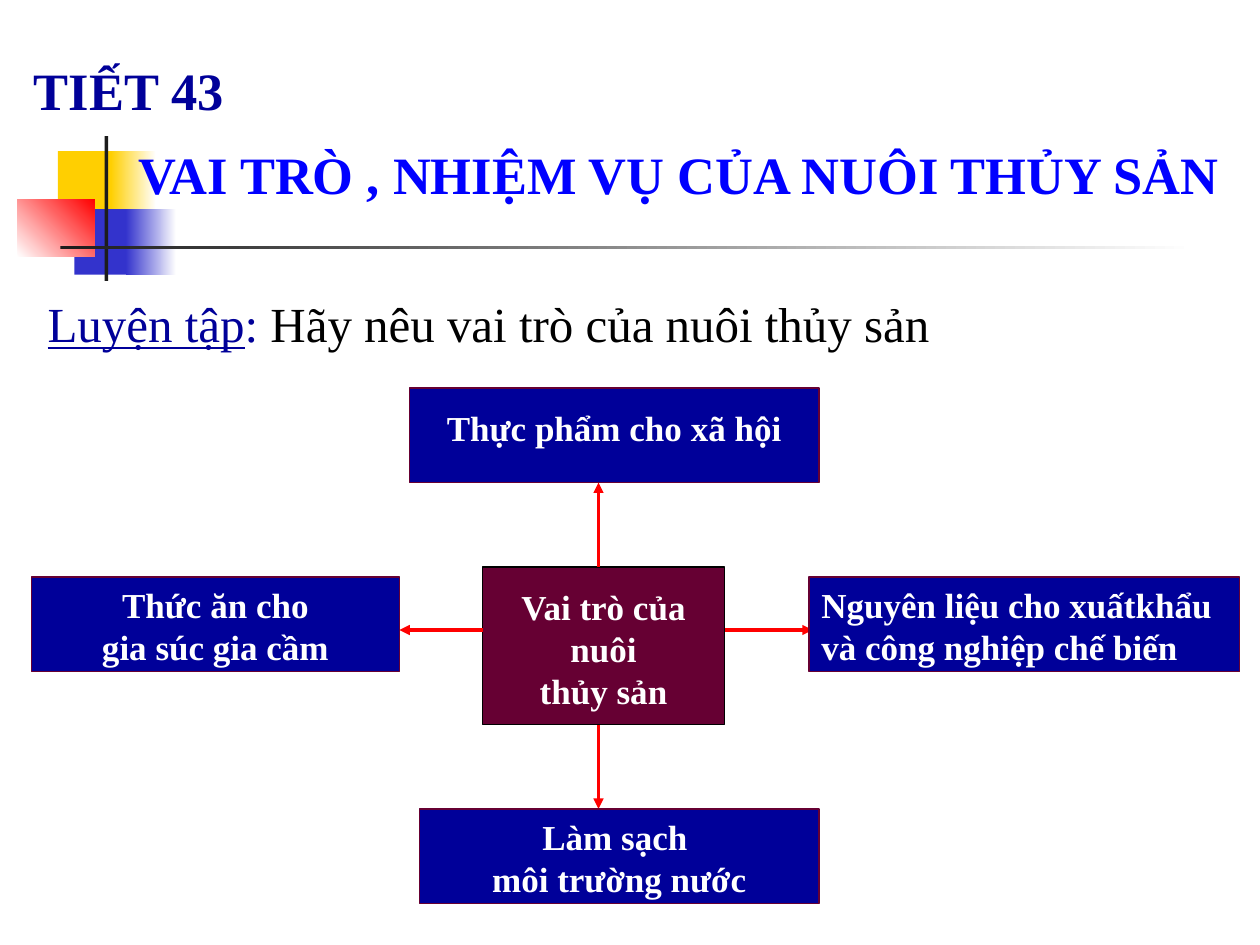
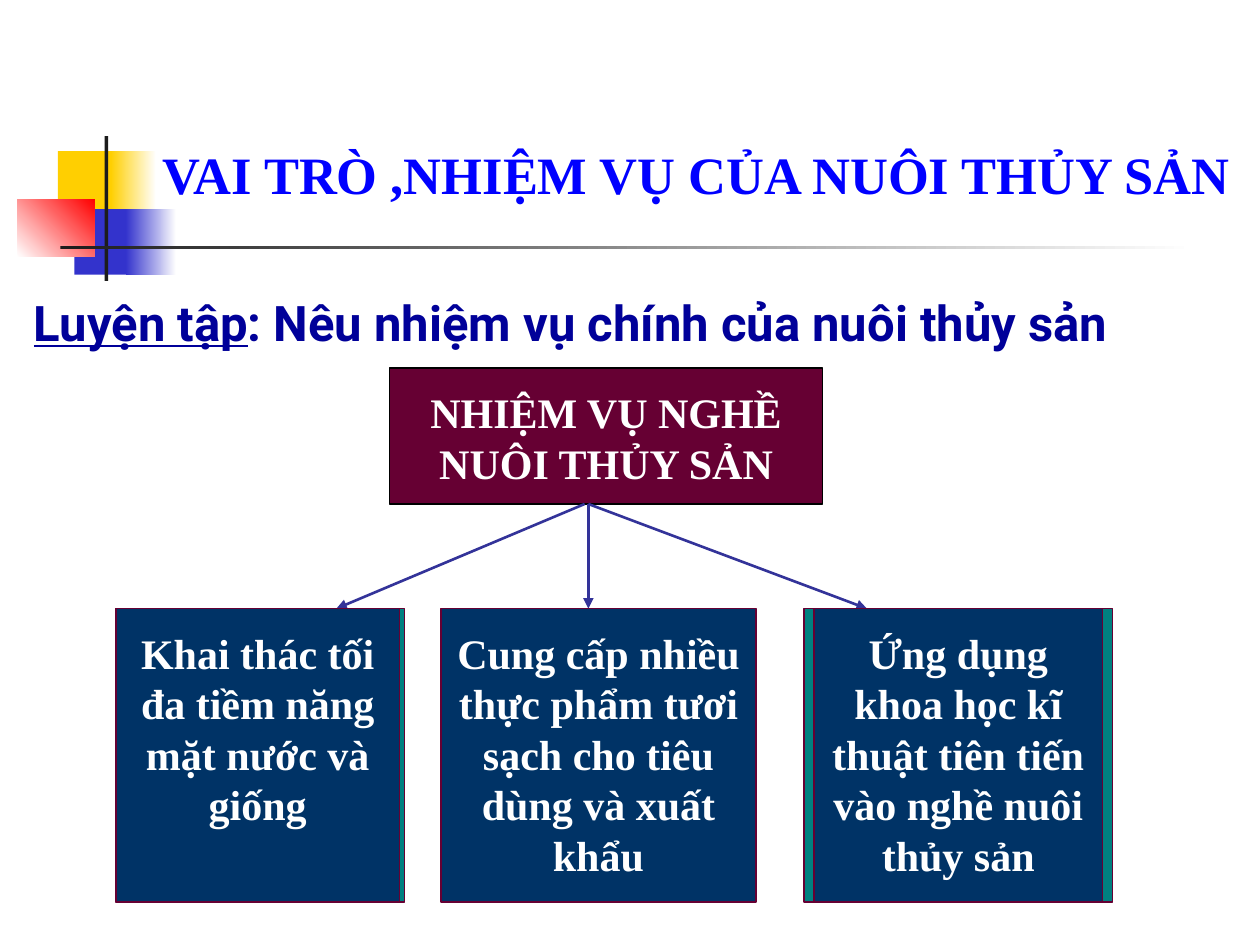
from lxml import etree
from pptx import Presentation
from pptx import util as u
from pptx.dml.color import RGBColor
from pptx.enum import shapes, text
from pptx.oxml import ns

COLORS = {
    "white": "FFFFFF", "black": "000000", "ink": "1C1C1C",
    "yellow": "FFCF01", "violet": "3333CC", "red": "FF0000",
    "heading": "0000FF", "navy": "000099", "maroon": "660033",
    "teal": "008080", "deep": "003366", "branch": "333399",
}
SERIF = "Times New Roman"
TITLE_ONLY = 5


def rgb(name):
    return RGBColor.from_string(COLORS[name])


def write(frame, words, size=20, color="white", font=SERIF, bold=True,
          underline=False, align=text.PP_ALIGN.LEFT, follow=False):
    """Write one paragraph per line; follow=True continues the last paragraph."""
    for number, line in enumerate(words.split("\n")):
        new = number > 0 and not follow
        paragraph = frame.add_paragraph() if new else frame.paragraphs[-1]
        paragraph.alignment = align
        run = paragraph.add_run()
        run.text = line
        run.font.size = u.Pt(size)
        run.font.name = font
        run.font.bold = bold
        run.font.underline = underline
        run.font.color.rgb = rgb(color)


class Deck:
    def __init__(self):
        self.prs = Presentation()
        self.prs.slide_width, self.prs.slide_height = u.Inches(10), u.Inches(7.5)
        self.layout = self.prs.slide_layouts[TITLE_ONLY]
        self.slide = None

    def new_slide(self, title, left, width):
        self.slide = self.prs.slides.add_slide(self.layout)
        heading = self.slide.shapes.title
        heading.left, heading.top = u.Inches(left), u.Inches(1.08)
        heading.width, heading.height = u.Inches(width), u.Inches(0.6)
        self.plain_frame(heading.text_frame)
        write(heading.text_frame, title, size=30, color="heading")

    def plain_frame(self, frame):
        frame.auto_size = text.MSO_AUTO_SIZE.NONE
        frame.word_wrap = False
        frame.vertical_anchor = text.MSO_ANCHOR.TOP

    def label(self, left, top, width, height, words, **style):
        box = self.slide.shapes.add_textbox(*map(u.Inches, (left, top, width, height)))
        self.plain_frame(box.text_frame)
        write(box.text_frame, words, **style)
        return box.text_frame

    def rect(self, left, top, width, height, fill, line=None):
        shape = self.slide.shapes.add_shape(
            shapes.MSO_SHAPE.RECTANGLE, *map(u.Inches, (left, top, width, height)))
        shape.shadow.inherit = False
        shape.fill.solid()
        shape.fill.fore_color.rgb = rgb(fill)
        if line:
            shape.line.color.rgb = rgb(line)
            shape.line.width = u.Pt(0.75)
        else:
            shape.line.fill.background()
        return shape

    def fade(self, left, top, width, height, start, end, angle=0):
        shape = self.rect(left, top, width, height, start)
        shape.fill.gradient()
        shape.fill.gradient_angle = angle
        for stop, color in zip(shape.fill.gradient_stops, (start, end)):
            stop.color.rgb = rgb(color)
        return shape

    def box(self, left, top, width, height, words, fill, line="maroon",
            inset=0.05, align=text.PP_ALIGN.CENTER, **style):
        frame = self.rect(left, top, width, height, fill, line).text_frame
        frame.word_wrap = True
        frame.vertical_anchor = text.MSO_ANCHOR.TOP
        frame.margin_top = u.Inches(inset)
        write(frame, words, align=align, **style)

    def arrow(self, start, end, color, width):
        link = self.slide.shapes.add_connector(
            shapes.MSO_CONNECTOR.STRAIGHT, *map(u.Inches, (*start, *end)))
        link.line.color.rgb = rgb(color)
        link.line.width = u.Pt(width)
        etree.SubElement(link.line._get_or_add_ln(), ns.qn("a:tailEnd"), type="triangle")
        etree.SubElement(link.element.spPr, ns.qn("a:effectLst"))

    def decorate_layout(self):
        """Draw the colour blocks and rules on the current slide, then share them."""
        ornaments = [
            self.rect(0.46, 1.2, 0.48, 0.52, "yellow"),
            self.fade(0.88, 1.2, 0.36, 0.52, "yellow", "white"),
            self.rect(0.59, 1.66, 0.46, 0.52, "violet"),
            self.fade(1, 1.66, 0.4, 0.52, "violet", "white"),
            self.fade(0.14, 1.58, 0.61, 0.46, "white", "red", angle=45),
            self.rect(0.83, 1.08, 0.03, 1.15, "ink"),
            self.fade(0.48, 1.95, 9, 0.03, "ink", "white"),
        ]
        for number, ornament in enumerate(ornaments, start=20):
            ornament.element.nvSpPr.cNvPr.set("id", str(number))
            self.layout.shapes.element.append(ornament.element)


def roles_slide(deck):
    deck.new_slide("VAI TRÒ , NHIỆM VỤ CỦA NUÔI THỦY SẢN", 1, 8.89)
    deck.decorate_layout()
    deck.label(0.17, 0.41, 1.72, 0.6, "TIẾT 43", size=30, color="navy")
    exercise = deck.label(0.28, 2.28, 7.2, 0.57, "Luyện tập", size=28,
                          color="navy", bold=False, underline=True)
    for words, color in ((": ", "navy"), ("Hãy nêu vai trò của nuôi thủy sản", "black")):
        write(exercise, words, size=28, color=color, bold=False, follow=True)

    deck.box(3.83, 4.5, 1.92, 1.25, "Vai trò của nuôi\nthủy sản", "maroon",
             line="black", inset=0.15)
    for start, end in (((4.75, 4.5), (4.75, 3.83)), ((3.83, 5), (3.17, 5)),
                       ((5.75, 5), (6.45, 5)), ((4.75, 5.75), (4.75, 6.42))):
        deck.arrow(start, end, "red", 1.75)

    deck.box(3.25, 3.08, 3.25, 0.75, "Thực phẩm cho xã hội", "navy", inset=0.15)
    deck.box(6.42, 4.58, 3.42, 0.75,
             "Nguyên liệu cho xuấtkhẩu\nvà công nghiệp chế biến", "navy",
             align=text.PP_ALIGN.LEFT)
    deck.box(3.33, 6.42, 3.17, 0.75, "Làm sạch \nmôi trường nước", "navy")
    deck.box(0.25, 4.58, 2.92, 0.75, "Thức ăn cho\ngia súc gia cầm", "navy")


def tasks_slide(deck):
    deck.new_slide("VAI TRÒ ,NHIỆM VỤ CỦA NUÔI THỦY SẢN", 1.19, 8.78)
    exercise = deck.label(0.17, 2.27, 9.83, 0.57, "Luyện tập", size=28,
                          color="navy", font="Roboto", underline=True)
    write(exercise, ": Nêu nhiệm vụ chính của nuôi thủy sản", size=28,
          color="navy", font="Roboto", follow=True)

    deck.box(3.09, 2.92, 3.44, 1.08, "NHIỆM VỤ NGHỀ NUÔI THỦY SẢN", "maroon",
             line="black", inset=0.15, size=24)
    task_top, task_height = 4.83, 2.33
    for left, width in ((0.92, 2.29), (6.38, 2.45)):
        deck.rect(left, task_top, width, task_height, "teal", "maroon")
    for start_x, end_x in ((4.64, 2.67), (4.67, 4.67), (4.67, 6.88)):
        deck.arrow((start_x, 4), (end_x, task_top), "branch", 1.5)
    tasks = (
        (0.92, 2.25, "Khai thác tối đa tiềm năng mặt nước và giống"),
        (3.5, 2.5, "Cung cấp nhiều thực phẩm tươi sạch cho tiêu dùng và xuất khẩu"),
        (6.46, 2.29, "Ứng dụng khoa học kĩ thuật tiên tiến vào nghề nuôi thủy sản"),
    )
    for left, width, words in tasks:
        deck.box(left, task_top, width, task_height, words, "deep", inset=0.15, size=24)


def main():
    deck = Deck()
    roles_slide(deck)
    tasks_slide(deck)
    deck.prs.save("out.pptx")


if __name__ == "__main__":
    main()
